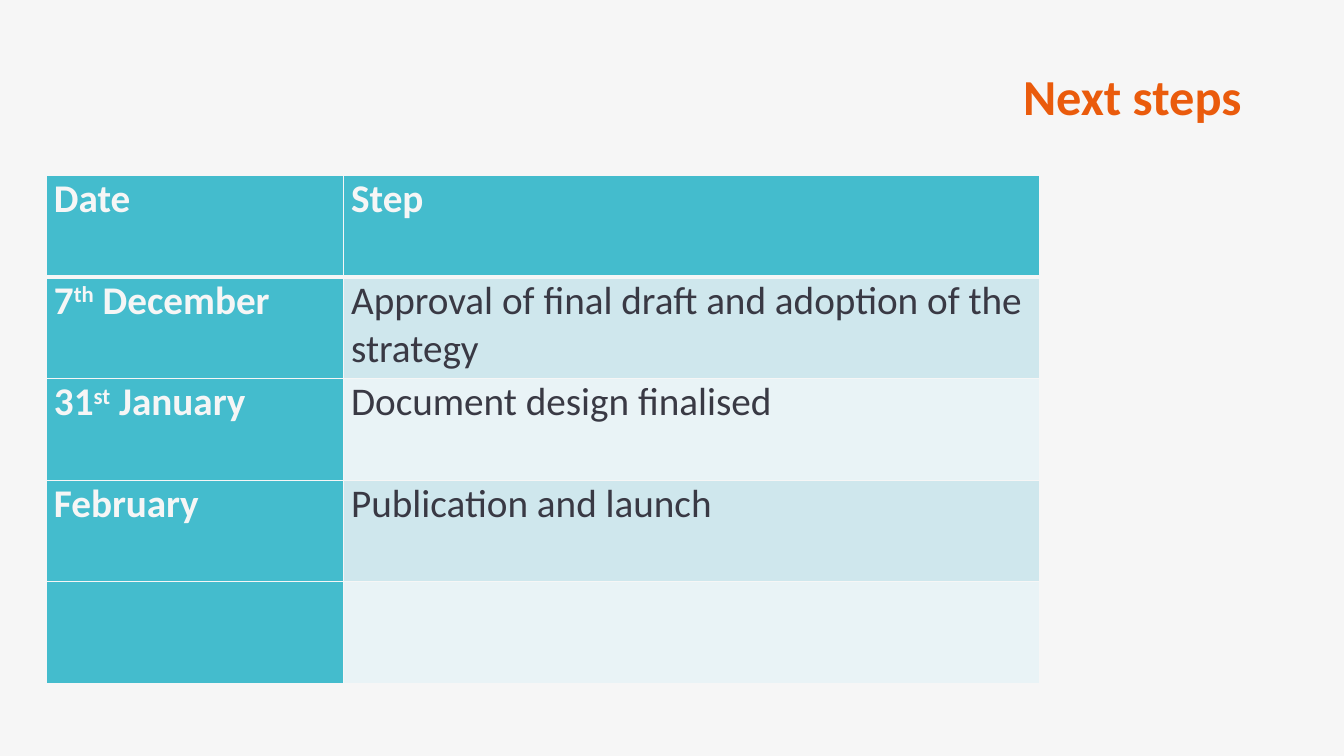
import dataclasses

import pptx
import pptx.dml.color
import pptx.enum.text
import pptx.oxml
import pptx.oxml.ns
import pptx.util

Cm = pptx.util.Cm
Pt = pptx.util.Pt


@dataclasses.dataclass(frozen=True)
class Theme:
    font: str = "Calibri"
    title_size: int = 36
    table_size: int = 28
    background: str = "F6F6F6"
    title: str = "EA5B0C"
    accent: str = "44BCCD"
    text: str = "393944"
    bands: tuple = ("CFE7ED", "E9F3F6")
    border: float = 1
    header_border: float = 3


THEME = Theme()

# Each cell is a list of (text, is superscript) spans
STEPS = [
    ([("Date", False)], [("Step", False)]),
    (
        [("7", False), ("th", True), (" December", False)],
        [("Approval of final draft and adoption of the strategy", False)],
    ),
    (
        [("31", False), ("st", True), (" January", False)],
        [("Document design finalised", False)],
    ),
    ([("February", False)], [("Publication and launch", False)]),
    ([], []),
]
COLUMN_WIDTHS = (Cm(7.49), Cm(17.55))
ROW_HEIGHT = Cm(2.56)


def rgb(colour):
    return pptx.dml.color.RGBColor.from_string(colour)


def add_span(para, text, size, colour, bold, superscript=False):
    span = para.add_run()
    span.text = text
    span.font.name = THEME.font
    span.font.size = Pt(size)
    span.font.bold = bold
    span.font.color.rgb = rgb(colour)
    if superscript:
        span.font._element.set("baseline", "30000")


def add_title(page, text):
    title = page.shapes.title
    title.left, title.top = Cm(9.42), Cm(1.55)
    title.width, title.height = Cm(22.12), Cm(1.88)
    title.text_frame.vertical_anchor = pptx.enum.text.MSO_ANCHOR.MIDDLE
    para = title.text_frame.paragraphs[0]
    para.alignment = pptx.enum.text.PP_ALIGN.RIGHT
    para.line_spacing = 0.9
    add_span(para, text, THEME.title_size, THEME.title, True)


def add_border(cell, side, width):
    namespace = pptx.oxml.ns.nsdecls("a")
    line = pptx.oxml.parse_xml(
        f'<a:{side} {namespace} w="{Pt(width)}"><a:solidFill>'
        f'<a:srgbClr val="{THEME.background}"/></a:solidFill></a:{side}>'
    )
    cell._tc.get_or_add_tcPr().append(line)


def format_cell(cell, spans, row, column):
    # The heavy rule lies between the header and the first step
    heavy_side = {0: "lnB", 1: "lnT"}.get(row)
    for side in ("lnL", "lnR", "lnT", "lnB"):
        add_border(cell, side, THEME.header_border if side == heavy_side else THEME.border)

    heading = row == 0 or column == 0
    cell.fill.solid()
    cell.fill.fore_color.rgb = rgb(THEME.accent if heading else THEME.bands[(row - 1) % 2])
    cell.margin_left = cell.margin_right = Cm(0.19)
    cell.margin_top = cell.margin_bottom = 0

    para = cell.text_frame.paragraphs[0]
    para.space_after = Pt(3)
    colour = THEME.background if heading else THEME.text
    for text, superscript in spans:
        add_span(para, text, THEME.table_size, colour, heading, superscript)


def add_steps_table(page):
    frame = page.shapes.add_table(
        len(STEPS), len(COLUMN_WIDTHS), Cm(1.17), Cm(4.42),
        sum(COLUMN_WIDTHS), ROW_HEIGHT * len(STEPS),
    )
    table = frame.table
    table.first_col = True
    for column, width in zip(table.columns, COLUMN_WIDTHS):
        column.width = width
    for row, step in enumerate(STEPS):
        table.rows[row].height = ROW_HEIGHT
        for column, spans in enumerate(step):
            format_cell(table.cell(row, column), spans, row, column)


def main():
    deck = pptx.Presentation()
    deck.slide_width, deck.slide_height = Cm(33.87), Cm(19.05)

    # Title Only layout
    page = deck.slides.add_slide(deck.slide_layouts[5])
    page.background.fill.solid()
    page.background.fill.fore_color.rgb = rgb(THEME.background)

    add_title(page, "Next steps")
    add_steps_table(page)
    deck.save("out.pptx")


if __name__ == "__main__":
    main()
